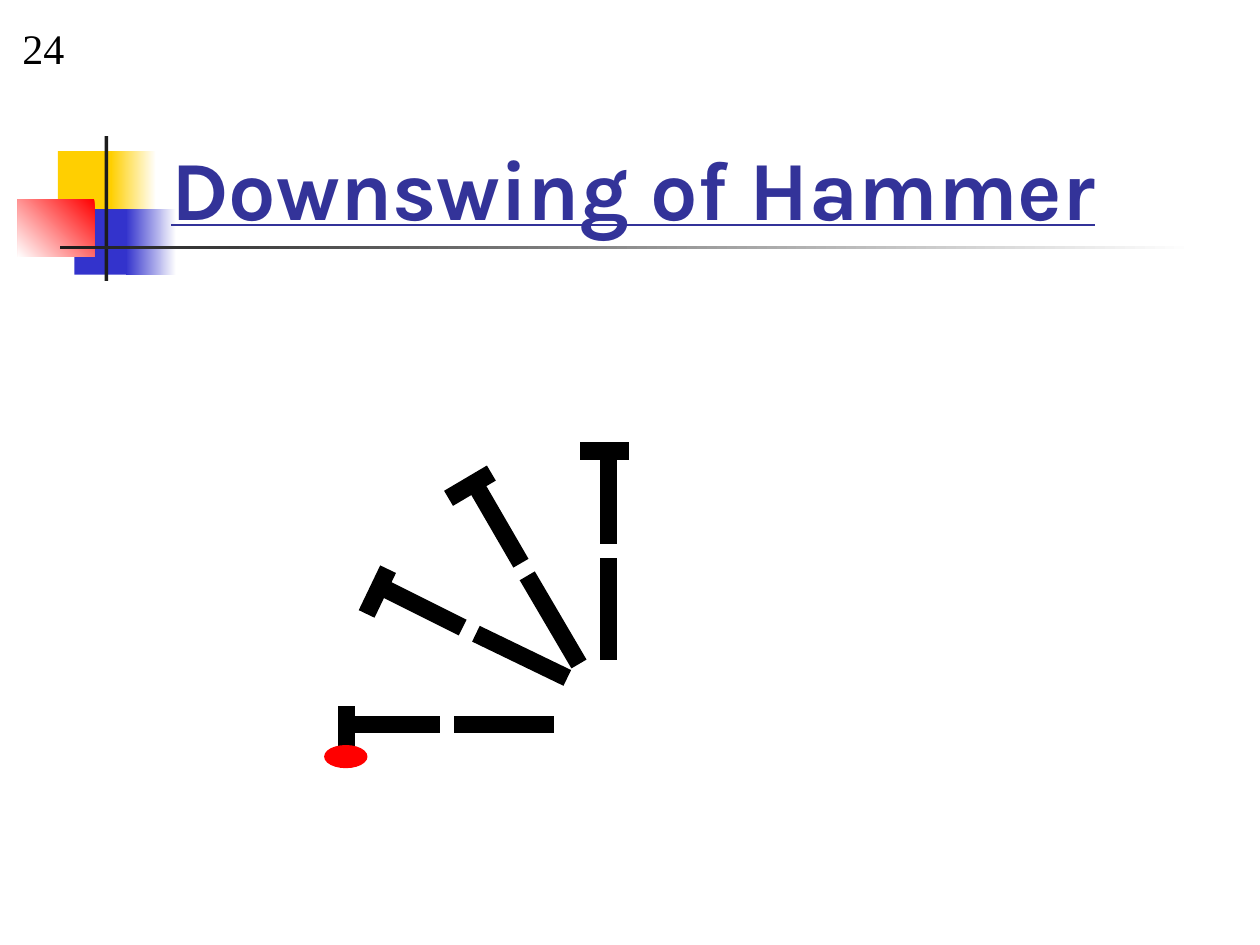
from dataclasses import dataclass

from lxml import etree
from pptx import Presentation
from pptx.dml.color import RGBColor
from pptx.enum.shapes import MSO_CONNECTOR, MSO_SHAPE
from pptx.enum.text import MSO_ANCHOR, PP_ALIGN
from pptx.oxml.ns import qn
from pptx.util import Inches, Pt

RECT, OVAL = MSO_SHAPE.RECTANGLE, MSO_SHAPE.OVAL
STRAIGHT = MSO_CONNECTOR.STRAIGHT
LEFT = PP_ALIGN.LEFT
TOP, BOTTOM = MSO_ANCHOR.TOP, MSO_ANCHOR.BOTTOM

COLORS = {
    "white": "FFFFFF", "black": "000000", "yellow": "FFCF01", "blue": "3333CC",
    "red": "FF0000", "charcoal": "1C1C1C", "title": "333399",
}
Box = tuple[float, float, float, float]
Segment = tuple[float, float, float, float]


@dataclass
class Block:
    box: Box
    colors: tuple[str, ...]  # one for a solid fill, two for a gradient
    angle: float = 180  # counter-clockwise


@dataclass
class Hammer:
    head: Segment
    upper_handle: Segment
    lower_handle: Segment


BLOCKS = [
    Block((0.46, 1.2, 0.48, 0.52), ("yellow",)),
    Block((0.88, 1.2, 0.36, 0.52), ("white", "yellow")),
    Block((0.59, 1.66, 0.46, 0.52), ("blue",)),
    Block((1, 1.66, 0.4, 0.52), ("white", "blue")),
    Block((0.14, 1.58, 0.61, 0.46), ("red", "white"), 225),
    Block((0.83, 1.08, 0.03, 1.15), ("charcoal",)),
    Block((0.48, 1.95, 9, 0.03), ("white", "charcoal")),
]
HAMMERS = [
    Hammer((2.75, 5.67, 2.75, 5.92), (2.83, 5.75, 3.42, 5.75), (3.67, 5.75, 4.33, 5.75)),
    Hammer((4.92, 3.58, 4.67, 3.58), (4.83, 3.67, 4.83, 4.25), (4.83, 4.5, 4.83, 5.17)),
    Hammer((3.05, 4.58, 2.94, 4.81), (3.09, 4.69, 3.61, 4.95), (3.84, 5.06, 4.44, 5.35)),
    Hammer((3.84, 3.79, 3.62, 3.92), (3.81, 3.91, 4.1, 4.41), (4.22, 4.63, 4.56, 5.21)),
]


def rgb(name: str) -> RGBColor:
    return RGBColor.from_string(COLORS[name])


def add_block(slide, block: Block, kind=RECT):
    s = slide.shapes.add_shape(kind, *map(Inches, block.box))
    s.shadow.inherit = False
    s.line.fill.background()
    if len(block.colors) == 1:
        s.fill.solid()
        s.fill.fore_color.rgb = rgb(block.colors[0])
    else:
        s.fill.gradient()
        s.fill.gradient_angle = block.angle
        for stop, color in zip(s.fill.gradient_stops, block.colors):
            stop.color.rgb = rgb(color)
    return s


def add_hammer(slide, hammer: Hammer) -> None:
    group = slide.shapes.add_group_shape()
    for segment in (hammer.head, hammer.upper_handle, hammer.lower_handle):
        c = group.shapes.add_connector(STRAIGHT, *map(Inches, segment))
        c.line.width = Pt(10)
        c.line.color.rgb = rgb("black")
        c.line._get_or_add_ln().set("cap", "sq")
        etree.SubElement(c._element.spPr, qn("a:effectLst"))


def write_text(s, text: str, *, size: float, font: str, color: str,
               bold: bool = False, underline: bool = False,
               anchor=TOP, wrap: bool = True) -> None:
    tf = s.text_frame
    tf.word_wrap = wrap
    tf.vertical_anchor = anchor
    tf.margin_left = tf.margin_right = Inches(0.1)
    tf.margin_top = tf.margin_bottom = Inches(0.05)
    p = tf.paragraphs[0]
    p.alignment = LEFT
    r = p.add_run()
    r.text = text
    r.font.size = Pt(size)
    r.font.name = font
    r.font.bold = bold
    r.font.underline = underline
    r.font.color.rgb = rgb(color)


def main() -> None:
    prs = Presentation()
    prs.slide_width, prs.slide_height = Inches(10), Inches(7.5)
    slide = prs.slides.add_slide(prs.slide_layouts[5])

    # Corner decoration
    for block in BLOCKS:
        add_block(slide, block)

    # Title, raised above the decoration
    title = slide.shapes.title
    title.left, title.top, title.width, title.height = map(Inches, (1.26, 0.68, 8.52, 1.25))
    write_text(title, "Downswing of Hammer", size=48, font="Karla", color="title",
               bold=True, underline=True, anchor=BOTTOM)
    slide.shapes._spTree.append(title._element)

    # Hammer positions and the struck target
    for hammer in HAMMERS:
        add_hammer(slide, hammer)
    target = add_block(slide, Block((2.58, 5.92, 0.33, 0.17), ("red",)), OVAL)
    target.line.color.rgb = rgb("red")
    target.line.width = Pt(1)

    # Slide number
    number = slide.shapes.add_textbox(*map(Inches, (0.08, 0.13, 0.53, 0.5)))
    write_text(number, "24", size=24, font="Times New Roman", color="black", wrap=False)

    prs.save("out.pptx")


if __name__ == "__main__":
    main()
